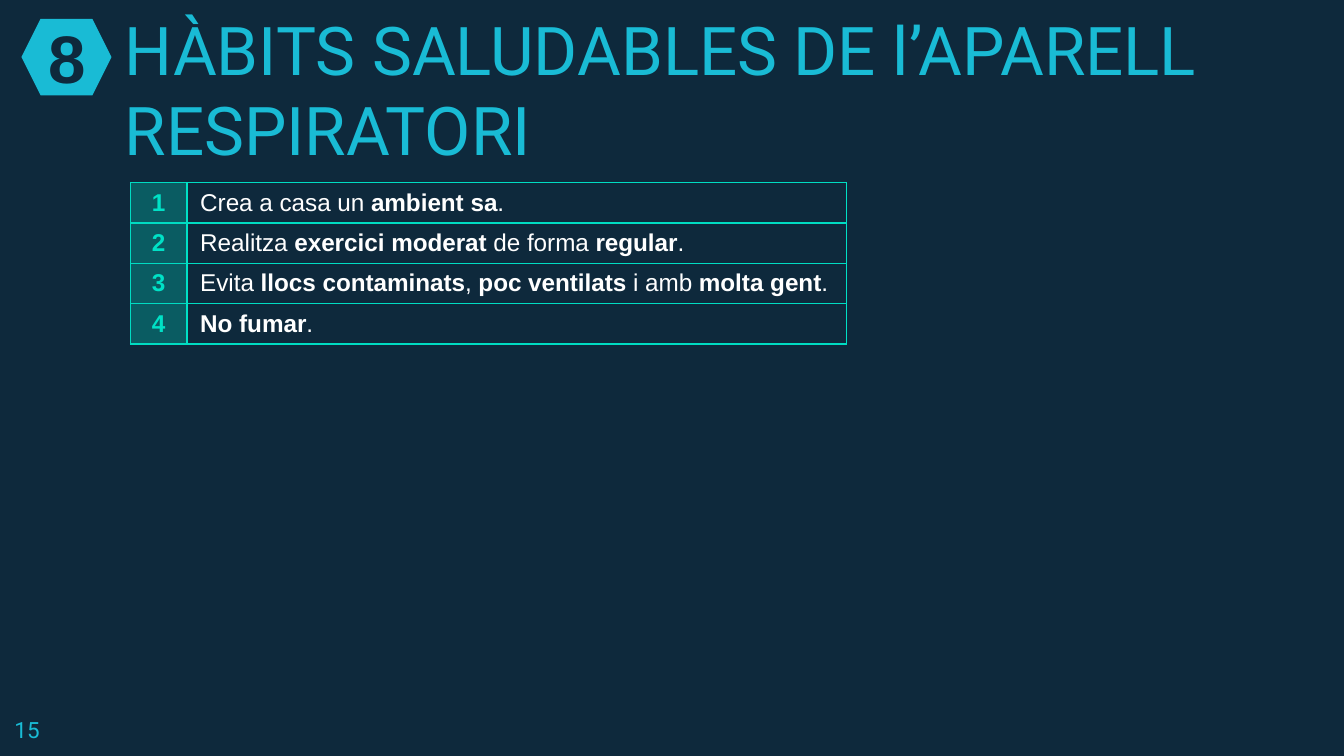
"""Build the slide on healthy habits for the respiratory system."""
import dataclasses

import lxml.etree
import pptx
import pptx.dml.color
import pptx.enum.shapes
import pptx.enum.text
import pptx.oxml.ns
import pptx.util

Inches = pptx.util.Inches
RGBColor = pptx.dml.color.RGBColor
Align = pptx.enum.text.PP_ALIGN
Anchor = pptx.enum.text.MSO_ANCHOR
qn = pptx.oxml.ns.qn

NAVY = RGBColor(0x0E, 0x29, 0x3C)
CYAN = RGBColor(0x19, 0xBB, 0xD5)
MINT = RGBColor(0x00, 0xE1, 0xC6)
TEAL = RGBColor(0x00, 0xDC, 0xC2)
WHITE = RGBColor(0xFF, 0xFF, 0xFF)
SLIDE_WIDTH = 10
SLIDE_HEIGHT = SLIDE_WIDTH * 9 / 16
ROW_HEIGHT = 0.3
CELL_MARGIN = 0.04
COLUMN_WIDTHS = (0.42, 4.91)
NUMBER_OPACITY = 28


@dataclasses.dataclass(frozen=True)
class TextStyle:
    font: str
    size: float
    color: RGBColor
    bold: bool = False


@dataclasses.dataclass(frozen=True)
class Label:
    text: str
    left: float
    top: float
    width: float
    height: float
    style: TextStyle
    anchor: Anchor


@dataclasses.dataclass(frozen=True)
class Habit:
    """Text pieces that alternate between regular and bold."""
    pieces: tuple[str, ...]


LABELS = (
    Label("HÀBITS SALUDABLES DE l’APARELL RESPIRATORI", 0.83, 0.79, 9.34, 0.57,
          TextStyle("Roboto", 36, CYAN), Anchor.BOTTOM),
    Label("15", 0.01, 5.23, 0.6, 0.39, TextStyle("Roboto", 12, CYAN), Anchor.TOP),
)
HABITS = (
    Habit(("Crea a casa un ", "ambient sa", ".")),
    Habit(("Realitza ", "exercici moderat", " de forma ", "regular", ".")),
    Habit(("Evita ", "llocs contaminats", ", ", "poc ventilats", " i amb ", "molta gent", ".")),
    Habit(("", "No fumar", ".")),
)
BADGE_STYLE = TextStyle("Arial", 36, NAVY, True)
NUMBER_STYLE = TextStyle("Arial", 13, MINT, True)
HABIT_STYLE = TextStyle("Arial", 13, WHITE)


def add_run(paragraph, text: str, style: TextStyle) -> None:
    run = paragraph.add_run()
    run.text = text
    run.font.name = style.font
    run.font.size = pptx.util.Pt(style.size)
    run.font.bold = style.bold
    run.font.color.rgb = style.color


def add_label(slide, label: Label) -> None:
    box = slide.shapes.add_textbox(
        Inches(label.left), Inches(label.top), Inches(label.width), Inches(label.height))
    frame = box.text_frame
    frame.word_wrap = True
    frame.vertical_anchor = label.anchor
    frame.margin_left = frame.margin_right = Inches(0.1)
    frame.margin_top = frame.margin_bottom = Inches(0.1)
    add_run(frame.paragraphs[0], label.text, label.style)


def add_badge(slide) -> None:
    badge = slide.shapes.add_shape(
        pptx.enum.shapes.MSO_SHAPE.HEXAGON,
        Inches(0.16), Inches(0.14), Inches(0.67), Inches(0.57))
    badge.shadow.inherit = False
    badge.fill.solid()
    badge.fill.fore_color.rgb = CYAN
    badge.line.fill.background()
    badge.text_frame.vertical_anchor = Anchor.MIDDLE
    paragraph = badge.text_frame.paragraphs[0]
    paragraph.alignment = Align.CENTER
    add_run(paragraph, "8", BADGE_STYLE)


def set_borders(cell, sides: dict[str, tuple[RGBColor, float]]) -> None:
    properties = cell._tc.get_or_add_tcPr()
    for index, (side, (color, width)) in enumerate(sides.items()):
        line = lxml.etree.Element(qn(f"a:ln{side}"), w=str(pptx.util.Pt(width)))
        fill = lxml.etree.SubElement(line, qn("a:solidFill"))
        lxml.etree.SubElement(fill, qn("a:srgbClr"), val=str(color))
        properties.insert(index, line)


def set_opacity(cell, percent: int) -> None:
    color = cell._tc.tcPr.find(qn("a:solidFill")).find(qn("a:srgbClr"))
    lxml.etree.SubElement(color, qn("a:alpha"), val=str(percent * 1000))


def add_habits_table(slide) -> None:
    table = slide.shapes.add_table(
        len(HABITS), len(COLUMN_WIDTHS), Inches(0.97), Inches(1.36),
        Inches(sum(COLUMN_WIDTHS)), Inches(ROW_HEIGHT * len(HABITS))).table
    table.first_row = table.horz_banding = False
    for column, width in zip(table.columns, COLUMN_WIDTHS):
        column.width = Inches(width)
    thin, divider = (TEAL, 0.75), (MINT, 1)
    for index, habit in enumerate(HABITS):
        table.rows[index].height = Inches(ROW_HEIGHT)
        number_cell, habit_cell = table.cell(index, 0), table.cell(index, 1)
        for cell in (number_cell, habit_cell):
            cell.margin_top = cell.margin_bottom = Inches(CELL_MARGIN)
            cell.vertical_anchor = Anchor.MIDDLE
        number_cell.fill.solid()
        number_cell.fill.fore_color.rgb = MINT
        set_opacity(number_cell, NUMBER_OPACITY)
        habit_cell.fill.background()
        set_borders(number_cell, {"L": thin, "R": divider, "T": thin, "B": thin})
        set_borders(habit_cell, {"L": divider, "R": divider, "T": thin, "B": thin})
        number = number_cell.text_frame.paragraphs[0]
        number.alignment = Align.CENTER
        add_run(number, str(index + 1), NUMBER_STYLE)
        paragraph = habit_cell.text_frame.paragraphs[0]
        for position, piece in enumerate(habit.pieces):
            if piece:
                style = dataclasses.replace(HABIT_STYLE, bold=position % 2 == 1)
                add_run(paragraph, piece, style)


def main() -> None:
    presentation = pptx.Presentation()
    presentation.slide_width = Inches(SLIDE_WIDTH)
    presentation.slide_height = Inches(SLIDE_HEIGHT)
    slide = presentation.slides.add_slide(presentation.slide_layouts[6])
    slide.background.fill.solid()
    slide.background.fill.fore_color.rgb = NAVY
    for label in LABELS:
        add_label(slide, label)
    add_badge(slide)
    add_habits_table(slide)
    presentation.save("out.pptx")


if __name__ == "__main__":
    main()
